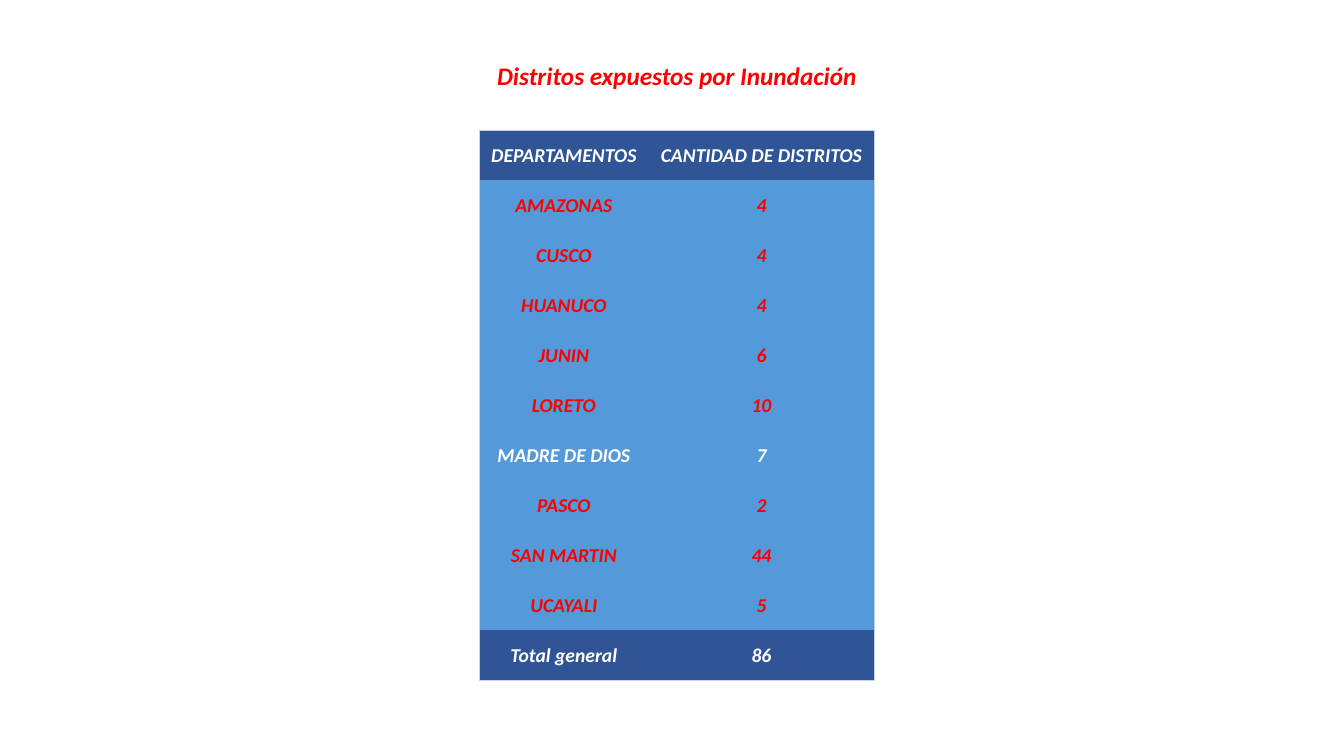
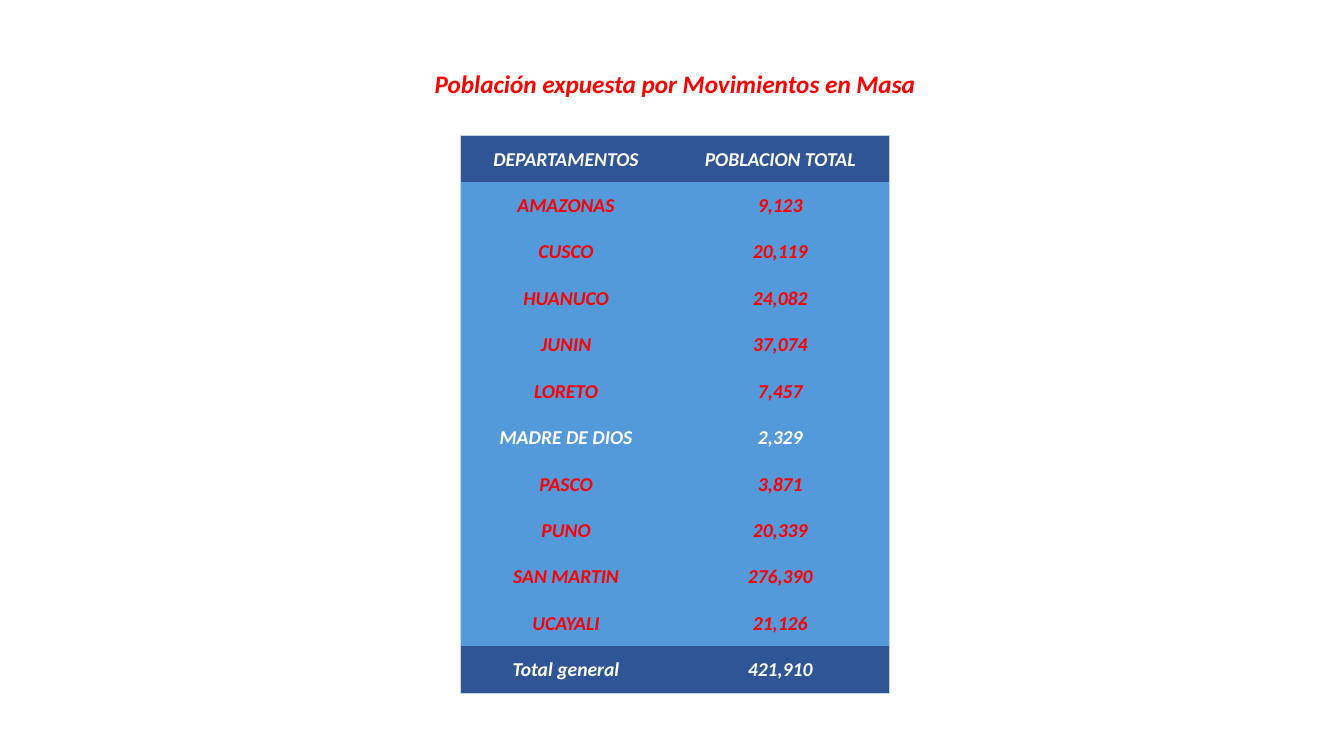
from lxml.etree import SubElement
from pptx import Presentation
from pptx.dml.color import RGBColor
from pptx.enum.text import MSO_ANCHOR, PP_ALIGN
from pptx.oxml.ns import qn
from pptx.util import Cm, Pt

# Shared style
FONT = "Calibri"
RED, WHITE = "FF0000", "FFFFFF"
BAND_BLUE, BODY_BLUE, FRAME_BLUE = "2F5597", "5499DA", "C4D5EB"
NO_STYLE = "{2D5ABB26-0587-4C30-8999-92F81FD0307C}"
HIGHLIGHTED = "MADRE DE DIOS"

# Content: lengths in centimetres, title box as left, top, width, height
slides = [
    {
        "title": "Distritos expuestos por Inundación",
        "title_box": (12.22, 1.4, 9.68, 1.02),
        "table_corner": (12.08, 3.28),
        "column_widths": (4.26, 5.7),
        "row_height": 1.26,
        "heading": "CANTIDAD DE DISTRITOS",
        "values": {
            "AMAZONAS": 4, "CUSCO": 4, "HUANUCO": 4, "JUNIN": 6, "LORETO": 10,
            "MADRE DE DIOS": 7, "PASCO": 2, "SAN MARTIN": 44, "UCAYALI": 5,
        },
    },
    {
        "title": "Población expuesta por Movimientos en Masa",
        "title_box": (10.62, 1.6, 12.78, 1.02),
        "table_corner": (11.61, 3.42),
        "column_widths": (5.31, 5.49),
        "row_height": 1.17,
        "heading": "POBLACION TOTAL",
        "values": {
            "AMAZONAS": 9123, "CUSCO": 20119, "HUANUCO": 24082, "JUNIN": 37074,
            "LORETO": 7457, "MADRE DE DIOS": 2329, "PASCO": 3871, "PUNO": 20339,
            "SAN MARTIN": 276390, "UCAYALI": 21126,
        },
    },
]


def write(text_frame, text, size, color):
    paragraph = text_frame.paragraphs[0]
    paragraph.alignment = PP_ALIGN.CENTER
    run = paragraph.add_run()
    run.text = text
    font = run.font
    font.name, font.size = FONT, Pt(size)
    font.bold = font.italic = True
    font.color.rgb = RGBColor.from_string(color)


def add_border(cell, side):
    properties = cell._tc.get_or_add_tcPr()
    line = SubElement(properties, qn(f"a:ln{side}"), w=str(Pt(0.5)))
    fill = SubElement(line, qn("a:solidFill"))
    SubElement(fill, qn("a:srgbClr"), val=FRAME_BLUE)


presentation = Presentation()
presentation.slide_width, presentation.slide_height = Cm(33.87), Cm(19.05)
title_only = presentation.slide_layouts[5]

for content in slides:
    slide = presentation.slides.add_slide(title_only)

    # Title
    title = slide.shapes.title
    title.left, title.top, title.width, title.height = map(Cm, content["title_box"])
    title.text_frame.word_wrap = False
    title.text_frame.vertical_anchor = MSO_ANCHOR.MIDDLE
    write(title.text_frame, content["title"], 18, RED)

    # Rows: heading, departments, total
    values = content["values"]
    rows = [("DEPARTAMENTOS", content["heading"])]
    rows += [(name, f"{value:,}") for name, value in values.items()]
    rows.append(("Total general", f"{sum(values.values()):,}"))

    # Table grid
    left, top = map(Cm, content["table_corner"])
    width = Cm(sum(content["column_widths"]))
    height = Cm(content["row_height"] * len(rows))
    table = slide.shapes.add_table(len(rows), 2, left, top, width, height).table
    table._tbl.tblPr.find(qn("a:tableStyleId")).text = NO_STYLE
    for column, column_width in zip(table.columns, content["column_widths"]):
        column.width = Cm(column_width)
    for row in table.rows:
        row.height = Cm(content["row_height"])

    # Cells, with a thin frame around the whole table
    last = len(rows) - 1
    for row_index, texts in enumerate(rows):
        is_band = row_index in (0, last)
        color = WHITE if is_band or texts[0] == HIGHLIGHTED else RED
        for column_index, text in enumerate(texts):
            cell = table.cell(row_index, column_index)
            cell.vertical_anchor = MSO_ANCHOR.MIDDLE
            cell.margin_left = cell.margin_right = cell.margin_top = Cm(0.02)
            cell.margin_bottom = 0
            add_border(cell, "LR"[column_index])
            if row_index == 0:
                add_border(cell, "T")
            if row_index == last:
                add_border(cell, "B")
            cell.fill.solid()
            cell.fill.fore_color.rgb = RGBColor.from_string(BAND_BLUE if is_band else BODY_BLUE)
            write(cell.text_frame, text, 14, color)

presentation.save("out.pptx")
